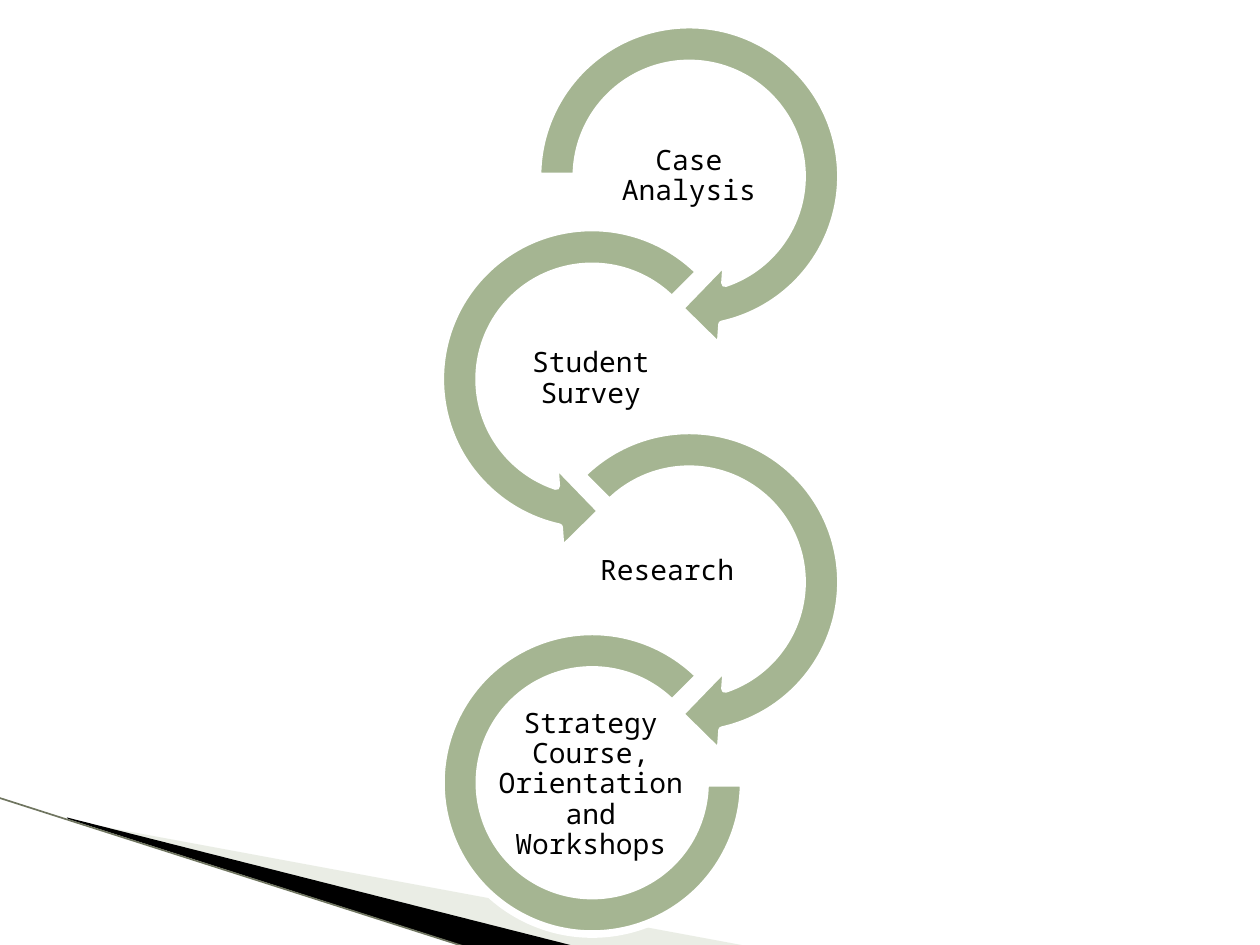
from lxml.etree import SubElement
from pptx import Presentation
from pptx.dml.color import RGBColor
from pptx.enum.shapes import MSO_CONNECTOR, MSO_SHAPE
from pptx.enum.text import MSO_ANCHOR, PP_ALIGN
from pptx.oxml.ns import qn
from pptx.util import Cm, Pt


def color(hex_string):
    return RGBColor.from_string(hex_string)


def set_fill(shape, hex_string):
    shape.shadow.inherit = False
    shape.fill.solid()
    shape.fill.fore_color.rgb = color(hex_string)


presentation = Presentation()
presentation.slide_width = Cm(25.4)
presentation.slide_height = Cm(19.05)
slide = presentation.slides.add_slide(presentation.slide_layouts[6])
shapes = slide.shapes

# Wedges in the bottom left corner: corner points, colour, opacity in percent
wedges = [
    ([(1.4, 16.54), (15.11, 19.08), (11.58, 19.08), (1.4, 16.51)], "CBD4C0", 40),
    ([(1.35, 16.48), (11.61, 19.08), (9.45, 19.1), (1.37, 16.51)], "000000", 100),
]
for points, fill, opacity in wedges:
    corners = [(Cm(x), Cm(y)) for x, y in points]
    builder = shapes.build_freeform(*corners[0])
    builder.add_line_segments(corners[1:], close=True)
    wedge = builder.convert_to_shape()
    set_fill(wedge, fill)
    wedge.line.fill.background()
    if opacity < 100:
        fill_color = wedge.fill._xPr.find(qn("a:solidFill"))[0]
        SubElement(fill_color, qn("a:alpha"), val=str(opacity * 1000))

edge = shapes.add_connector(
    MSO_CONNECTOR.STRAIGHT, Cm(-0.03), Cm(16.08), Cm(9.42), Cm(19.1))
edge.line.color.rgb = color("6F7560")
edge.line.width = Pt(0.95)
SubElement(edge._element.spPr, qn("a:effectLst"))

# Chain of steps: arc type, arc left, top and size, adjustments,
# label, label box, label alignment
RIGHT, LEFT, ARC = (
    MSO_SHAPE.CIRCULAR_ARROW, MSO_SHAPE.LEFT_CIRCULAR_ARROW, MSO_SHAPE.BLOCK_ARC)
HEAD = 11.423
steps = [
    (RIGHT, (10.34, 0, 7.11), (0.11, HEAD, 45, 108, 0.125),
     "Case Analysis", (11.91, 2.57, 3.96, 1.98), PP_ALIGN.CENTER),
    (LEFT, (8.38, 4.09, 7.11), (0.11, HEAD, 63, 189, 0.125),
     "Student Survey", (9.93, 6.65, 3.96, 1.98), PP_ALIGN.CENTER),
    (RIGHT, (10.34, 8.18, 7.11), (0.11, HEAD, 45, 135, 0.125),
     "Research", (12.07, 10.36, 3.66, 2.31), PP_ALIGN.LEFT),
    (ARC, (8.89, 12.73, 6.1), (0, 189, 0.127),
     "Strategy Course, Orientation and Workshops",
     (9.93, 14.83, 3.96, 1.98), PP_ALIGN.CENTER),
]
frame_format = {
    "word_wrap": True,
    "vertical_anchor": MSO_ANCHOR.MIDDLE,
    "margin_left": Cm(0.03),
    "margin_right": Cm(0.03),
    "margin_top": Cm(0.03),
    "margin_bottom": Cm(0.03),
}
font_format = {"name": "Noto Sans Mono", "size": Pt(16)}

for kind, (left, top, size), adjustments, label, box, alignment in steps:
    arc = shapes.add_shape(kind, Cm(left), Cm(top), Cm(size), Cm(size))
    for index, value in enumerate(adjustments):
        arc.adjustments[index] = value
    set_fill(arc, "A5B592")
    arc.line.color.rgb = color("FFFFFF")
    arc.line.width = Pt(4.33)

    frame = shapes.add_textbox(*map(Cm, box)).text_frame
    for name, value in frame_format.items():
        setattr(frame, name, value)
    paragraph = frame.paragraphs[0]
    paragraph.alignment = alignment
    paragraph.line_spacing = 0.9
    run = paragraph.add_run()
    run.text = label
    for name, value in font_format.items():
        setattr(run.font, name, value)
    run.font.color.rgb = color("000000")

presentation.save("out.pptx")
